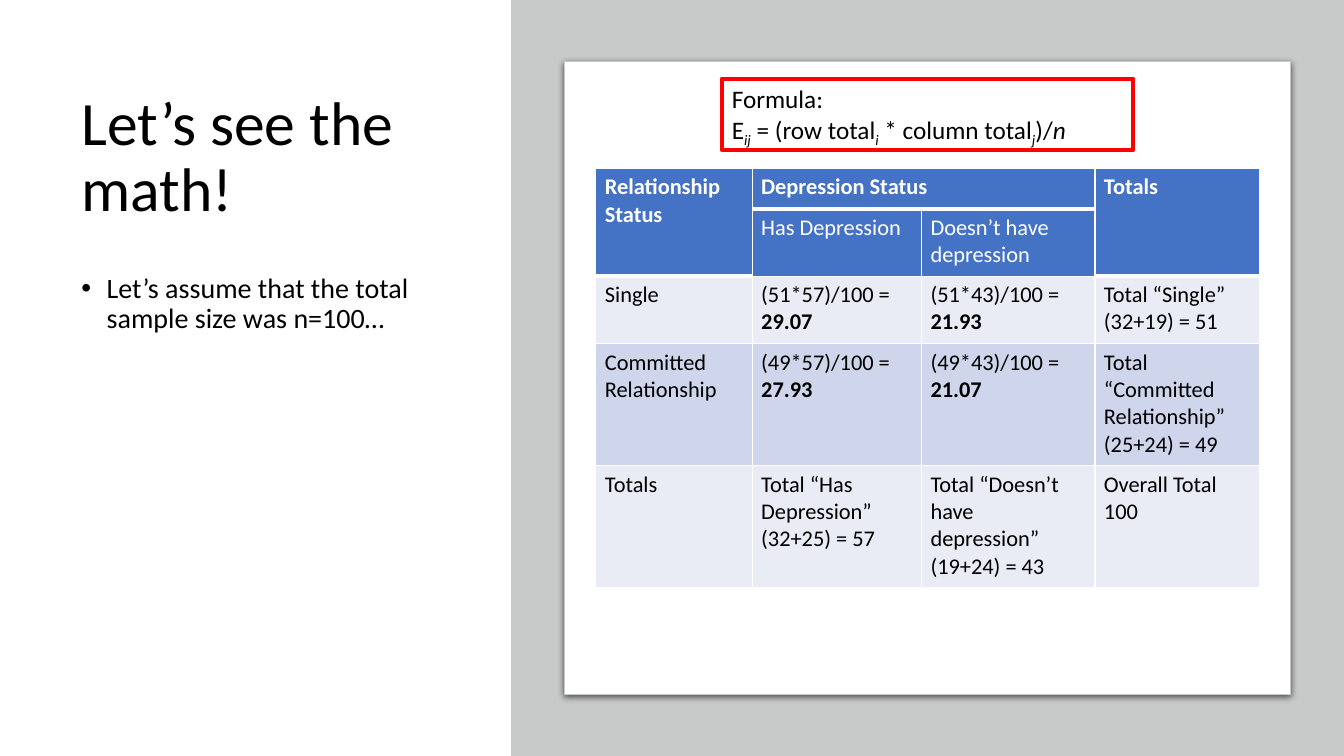
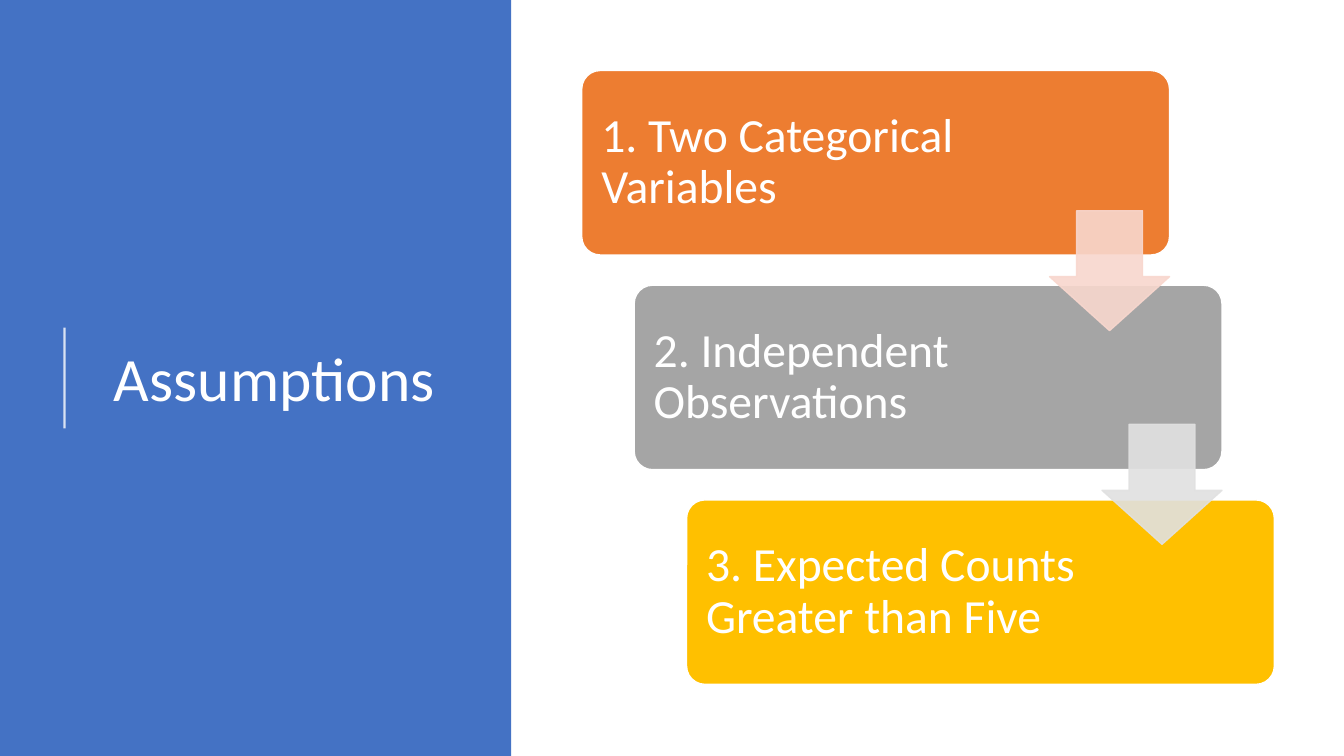
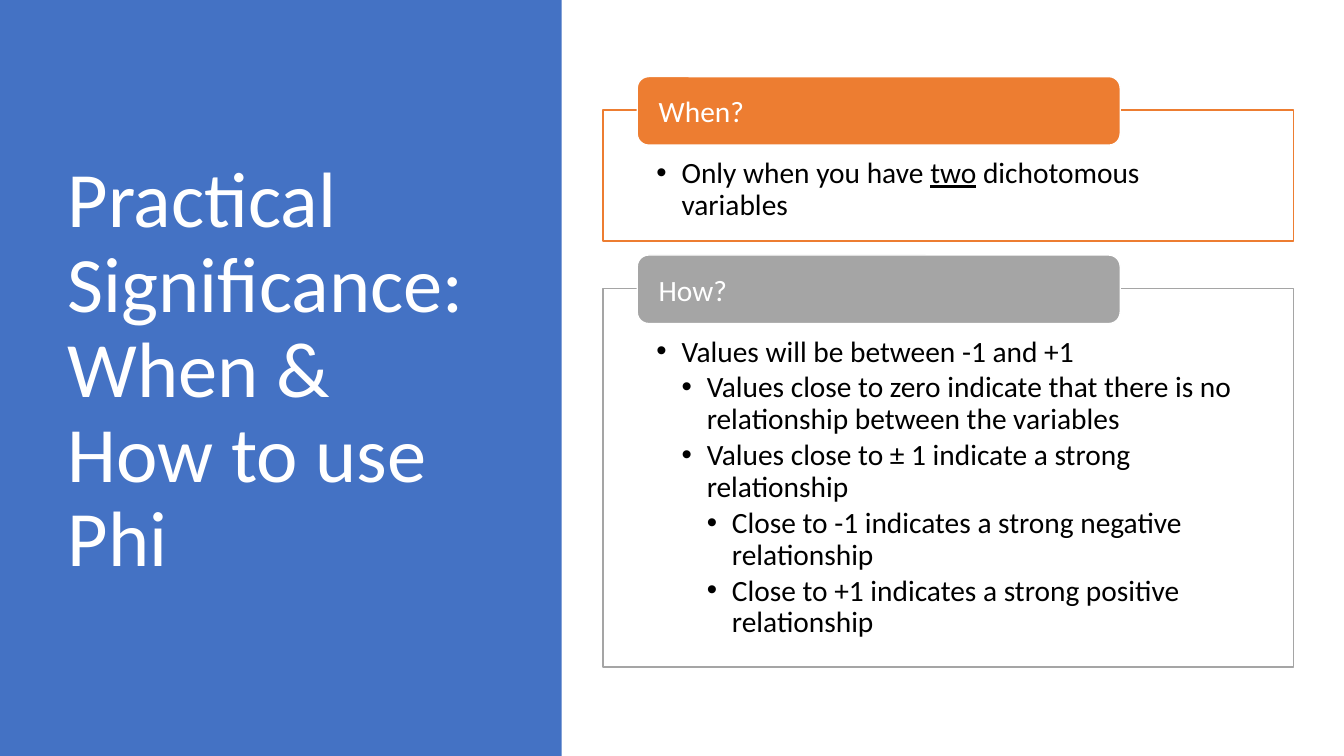
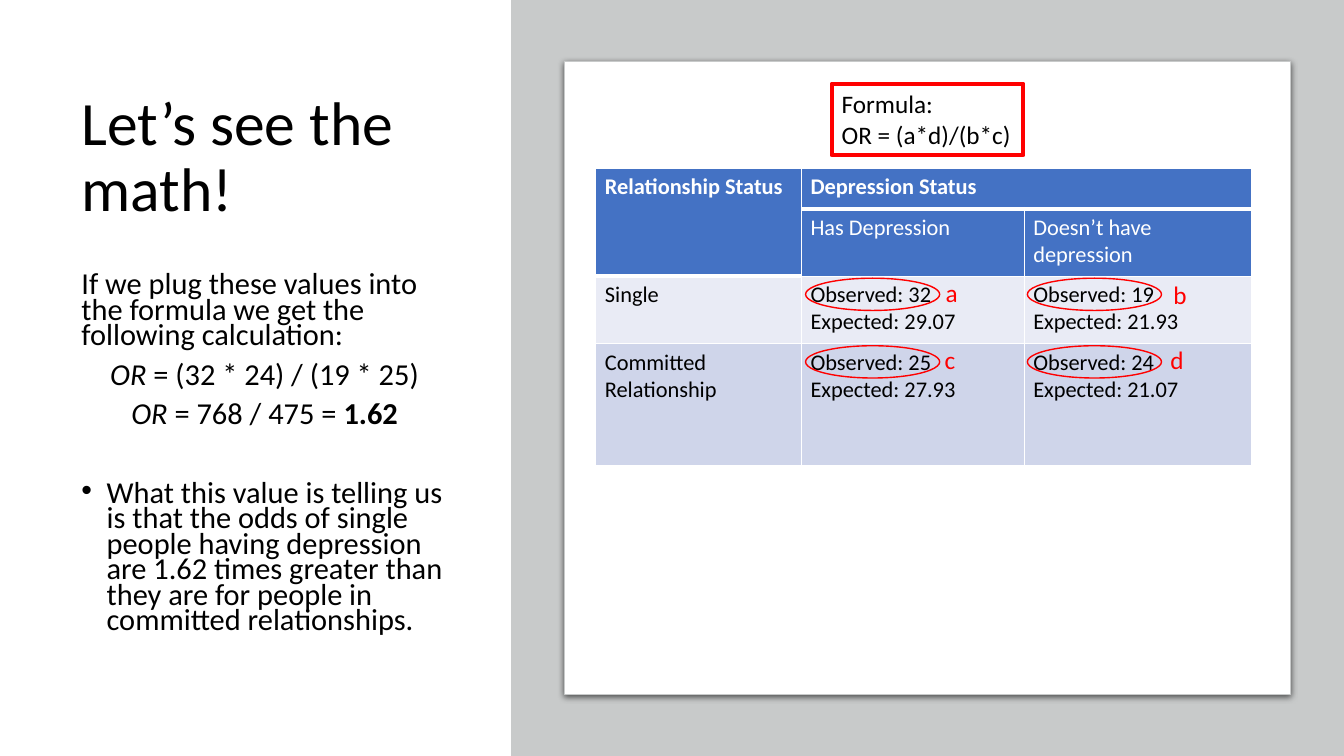
import dataclasses

import lxml.etree
import pptx
import pptx.dml.color
import pptx.enum.shapes
import pptx.enum.text
import pptx.oxml.ns
import pptx.util

Inches = pptx.util.Inches
Pt = pptx.util.Pt
Kind = pptx.enum.shapes.MSO_SHAPE
Align = pptx.enum.text.PP_ALIGN
Anchor = pptx.enum.text.MSO_ANCHOR
qn = pptx.oxml.ns.qn


# Theme: colours and type sizes
@dataclasses.dataclass(frozen=True)
class Theme:
    font: str = "Calibri"
    white: str = "FFFFFF"
    black: str = "000000"
    blue: str = "4472C4"
    orange: str = "ED7D31"
    gray: str = "A5A5A5"
    gold: str = "FFC000"
    peach: str = "F8D7CE"
    mist: str = "E1E1E1"
    stone: str = "C8CACA"
    red: str = "FF0000"
    bands: tuple = ("E9EBF5", "CFD5EA")
    huge: float = 56
    title: float = 44
    step: float = 34
    dense: float = 21.7
    point: float = 21
    body: float = 20
    note: float = 18
    cell: float = 16


MARKS = {"b": {"bold": True}, "i": {"italic": True}, "u": {"underline": True}}


def put(item, **vals):
    for key, val in vals.items():
        setattr(item, key, val)


def rgb(code):
    return pptx.dml.color.RGBColor.from_string(code)


def node(home, tag, **vals):
    item = lxml.etree.SubElement(home, qn(tag))
    for key, val in vals.items():
        item.set(key, str(val))
    return item


def par(*runs, level=0, **form):
    """A paragraph; a run is text or (text, marks), a level above 0 has a bullet."""
    return runs, level, form


class Deck:
    def __init__(self, theme):
        self.theme = theme
        self.file = pptx.Presentation()
        put(self.file, slide_width=Inches(13.33), slide_height=Inches(7.5))
        self.slide = None

    # Slide with its title
    def page(self, title, spot, size, color):
        self.slide = self.file.slides.add_slide(self.file.slide_layouts[5])
        head = self.slide.shapes.title
        left, top, width, height = map(Inches, spot)
        put(head, left=left, top=top, width=width, height=height)
        self.words(head, [par(title, line_spacing=0.9)], size, color, Anchor.MIDDLE)

    # Text
    def words(self, shape, pars, size, color, anchor=Anchor.TOP, pad=None, wrap=True):
        frame = shape.text_frame
        put(frame, word_wrap=wrap, vertical_anchor=anchor,
            auto_size=pptx.enum.text.MSO_AUTO_SIZE.NONE)
        if pad:
            sides = ("left", "top", "right", "bottom")
            put(frame, **{f"margin_{s}": Inches(v) for s, v in zip(sides, pad)})
        self.lines(frame, pars, size, color)

    def lines(self, frame, pars, size, color, bold=False):
        for num, item in enumerate(pars):
            runs, level, form = par(item) if isinstance(item, str) else item
            line = frame.add_paragraph() if num else frame.paragraphs[0]
            put(line, **{"alignment": Align.LEFT, **form})
            if level:
                props = line._p.get_or_add_pPr()
                props.set("marL", str(Inches(0.25 * level)))
                props.set("indent", str(Inches(-0.25)))
                node(props, "a:buFont", typeface="Arial")
                node(props, "a:buChar", char="•")
            for piece in runs:
                text, marks = (piece, "") if isinstance(piece, str) else piece
                run = line.add_run()
                run.text = text
                put(run.font, name=self.theme.font, size=Pt(size), bold=bold)
                run.font.color.rgb = rgb(color)
                for mark in marks:
                    put(run.font, **MARKS.get(mark, {}))
                if "s" in marks:
                    run._r.get_or_add_rPr().set("baseline", "-25000")

    def label(self, spot, pars, size, color, wrap=True):
        box = self.slide.shapes.add_textbox(*map(Inches, spot))
        self.words(box, pars, size, color, wrap=wrap)

    # Shapes
    def shape(self, kind, spot, fill=None, line=None, weight=1, adj=()):
        item = self.slide.shapes.add_shape(kind, *map(Inches, spot))
        item.shadow.inherit = False
        for num, val in enumerate(adj):
            item.adjustments[num] = val
        for paint, color in ((item.fill, fill), (item.line.fill, line)):
            if color:
                paint.solid()
                paint.fore_color.rgb = rgb(color)
            else:
                paint.background()
        if line:
            item.line.width = Pt(weight)
        return item

    def fade(self, item, share):
        for color in item._element.spPr.iter(qn("a:srgbClr")):
            node(color, "a:alpha", val=share * 1000)

    def panel(self, left, width, color):
        item = self.shape(Kind.RECTANGLE, (left, 0, width, 7.5), color)
        self.slide.shapes._spTree.insert(2, item._element)  # behind the title

    def rule(self, left, top, end, color):
        item = self.slide.shapes.add_connector(
            pptx.enum.shapes.MSO_CONNECTOR.STRAIGHT,
            *map(Inches, (left, top, left, end)))
        item.line.width = Pt(1.5)
        item.line.color.rgb = rgb(color)
        node(item._element.spPr, "a:effectLst")
        self.fade(item, 80)

    def card(self):
        look = self.theme
        item = self.shape(Kind.RECTANGLE, (5.6, 0.61, 7.2, 6.28),
                          look.white, look.stone, 0.75)
        glow = node(item._element.spPr.find(qn("a:effectLst")), "a:outerShdw",
                    blurRad=Pt(4.5), dist=Pt(1.5), dir=5400000,
                    algn="ctr", rotWithShape=0)
        node(node(glow, "a:srgbClr", val=look.black), "a:alpha", val=63000)

    def formula(self, spot, pars):
        look = self.theme
        item = self.shape(Kind.RECTANGLE, spot, line=look.red, weight=3)
        self.words(item, pars, look.note, look.black)

    # Table with two header rows; None continues a merged header
    def table(self, cols, tall, rows):
        look = self.theme
        spot = map(Inches, (5.91, 1.67, sum(cols), sum(tall)))
        frame = self.slide.shapes.add_table(len(rows), len(cols), *spot)
        grid = frame.table
        put(grid, first_row=False, horz_banding=False)
        for col, width in zip(grid.columns, cols):
            col.width = Inches(width)
        for row, height in zip(grid.rows, tall):
            row.height = Inches(height)
        deep = [c for c, item in enumerate(rows[1]) if item is None]

        def edge(r, c):
            return 3 if r == 0 or (r == 1 and c in deep) else 1

        for r, row in enumerate(rows):
            for c, item in enumerate(row):
                cell = grid.cell(r, c)
                put(cell, margin_left=Inches(0.09), margin_right=Inches(0.09))
                self.border(cell, L=1, R=1, T=edge(r - 1, c), B=edge(r, c))
                cell.fill.solid()
                cell.fill.fore_color.rgb = rgb(look.blue if r < 2 else look.bands[r % 2])
                if item:
                    pars = item if isinstance(item, list) else [item]
                    self.lines(cell.text_frame, pars, look.cell,
                               look.white if r < 2 else look.black, r == 0)
        for c in deep:
            grid.cell(0, c).merge(grid.cell(1, c))
        grid.cell(0, 1).merge(grid.cell(0, 2))

    def border(self, cell, **sides):
        props = cell._tc.get_or_add_tcPr()
        for side, weight in sides.items():
            line = node(props, f"a:ln{side}", w=Pt(weight))
            node(node(line, "a:solidFill"), "a:srgbClr", val=self.theme.white)

    # Layout of the worked examples
    def math(self, pars, size):
        look = self.theme
        self.page("Let’s see the math!", (0.71, 0.69, 3.83, 1.77), look.title, look.black)
        self.label((0.71, 2.67, 3.83, 4.14), pars, size, look.black)
        self.panel(5.07, 8.26, look.stone)
        self.card()

    # Framed list with a tab on its upper edge
    def topic(self, top, height, name, color, pars):
        look = self.theme
        frame = self.shape(Kind.RECTANGLE, (5.98, top, 6.85, height), look.white, color)
        self.words(frame, pars, look.point, look.black, pad=(0.53, 0.48, 0.53, 0.16))
        tab = self.shape(Kind.ROUNDED_RECTANGLE, (6.32, top - 0.33, 4.79, 0.68),
                         color, look.white)
        self.words(tab, [name], look.point, look.white, Anchor.MIDDLE, (0.18, 0, 0.18, 0))


def counts(deck):
    deck.math([par("Let’s assume that the total sample size was n=100…", level=1,
                   line_spacing=0.9, space_before=Pt(10))], deck.theme.body)

    def want(sums, value):
        return [par(f"({sums})/100 = ", (value, "b"))]

    deck.table((1.55, 1.68, 1.72, 1.63), (0.4, 0.67, 0.67, 1.21, 1.21), [
        ["Relationship Status", "Depression Status", None, "Totals"],
        [None, "Has Depression", "Doesn’t have depression", None],
        ["Single", want("51*57", "29.07"), want("51*43", "21.93"),
         ["Total “Single”", "(32+19) = 51"]],
        ["Committed Relationship", want("49*57", "27.93"), want("49*43", "21.07"),
         ["Total “Committed Relationship”", "(25+24) = 49"]],
        ["Totals", ["Total “Has Depression”", "(32+25) = 57"],
         ["Total “Doesn’t have depression”", "(19+24) = 43"],
         ["Overall Total", "100"]],
    ])
    deck.formula((7.16, 0.78, 4.08, 0.71), [
        "Formula:",
        par("E", ("ij", "is"), " = (row total", ("i", "is"), " * column total",
            ("j", "is"), ")/", ("n", "i")),
    ])


def rules(deck):
    look = deck.theme
    deck.page("Assumptions", (1.03, 0.78, 3.69, 6.02), look.title, look.white)
    deck.panel(0, 5.07, look.blue)
    deck.rule(0.64, 4.25, 3.25, look.white)
    steps = (("1. Two Categorical Variables", look.orange),
             ("2. Independent Observations", look.gray),
             ("3. Expected Counts Greater than Five", look.gold))
    for num, (name, color) in enumerate(steps):
        box = deck.shape(Kind.ROUNDED_RECTANGLE,
                         (5.77 + 0.52 * num, 0.7 + 2.13 * num, 5.83, 1.83),
                         color, look.white, adj=(0.1,))
        deck.words(box, [par(name, line_spacing=0.9)], look.step, look.white,
                   Anchor.MIDDLE, (0.14, 0.14, 1.85, 0.14))
    for num, color in enumerate((look.peach, look.mist)):
        arrow = deck.shape(Kind.DOWN_ARROW,
                           (10.41 + 0.52 * num, 2.09 + 2.12 * num, 1.19, 1.19),
                           color, color, adj=(0.55, 0.45))
        deck.fade(arrow, 90)


def phi(deck):
    look = deck.theme
    deck.page("Practical Significance: When & How to use Phi",
              (0.57, 0.68, 4.16, 6.02), look.huge, look.white)
    deck.panel(0, 5.57, look.blue)

    def point(level, *runs):
        return par(*runs, level=level, line_spacing=0.9, space_after=Pt(3))

    deck.topic(1.09, 1.3, "When?", look.orange, [
        point(1, "Only when you have ", ("two", "u"), " dichotomous variables")])
    deck.topic(2.86, 3.76, "How?", look.gray, [
        point(1, "Values will be between -1 and +1"),
        point(2, "Values close to zero indicate that there is no relationship "
                 "between the variables"),
        point(2, "Values close to ± 1 indicate a strong relationship"),
        point(3, "Close to -1 indicates a strong negative relationship"),
        point(3, "Close to +1 indicates a strong positive relationship"),
    ])


def odds(deck):
    look = deck.theme
    tight = {"line_spacing": 0.7, "space_before": Pt(10)}
    mid = {**tight, "alignment": Align.CENTER}
    deck.math([
        par("If we plug these values into the formula we get the following "
            "calculation:", **tight),
        par(("OR", "i"), " = (32 * 24) / (19 * 25)", **mid),
        par(("OR", "i"), " = 768 / 475 = ", ("1.62", "b"), **mid),
        par("What this value is telling us is that the odds of single people having "
            "depression are 1.62 times greater than they are for people in committed "
            "relationships.", level=1, **{**tight, "space_before": Pt(38)}),
    ], look.dense)

    def pair(seen, want):
        return [f"Observed: {seen}", f"Expected: {want}"]

    deck.table((2.04, 2.21, 2.25), (0.4, 0.67, 0.67, 1.21), [
        ["Relationship Status", "Depression Status", None],
        [None, "Has Depression", "Doesn’t have depression"],
        ["Single", pair(32, "29.07"), pair(19, "21.93")],
        ["Committed Relationship", pair(25, "27.93"), pair(24, "21.07")],
    ])
    # Ringed counts and their letters
    spots = (("a", 9.28, 2.7), ("b", 11.54, 2.72), ("c", 9.27, 3.37), ("d", 11.51, 3.37))
    for num, (name, left, top) in enumerate(spots):
        row, col = divmod(num, 2)
        deck.label((left, top, 0.33, 0.4), [name], look.note, look.red, wrap=False)
        deck.shape(Kind.OVAL, (7.99 + 2.2 * col, 2.76 + 0.67 * row, 1.33, 0.32),
                   line=look.red)
    deck.formula((8.25, 0.83, 1.9, 0.71), ["Formula:", "OR = (a*d)/(b*c)"])


def main():
    deck = Deck(Theme())
    for build in (counts, rules, phi, odds):
        build(deck)
    deck.file.save("out.pptx")


if __name__ == "__main__":
    main()
